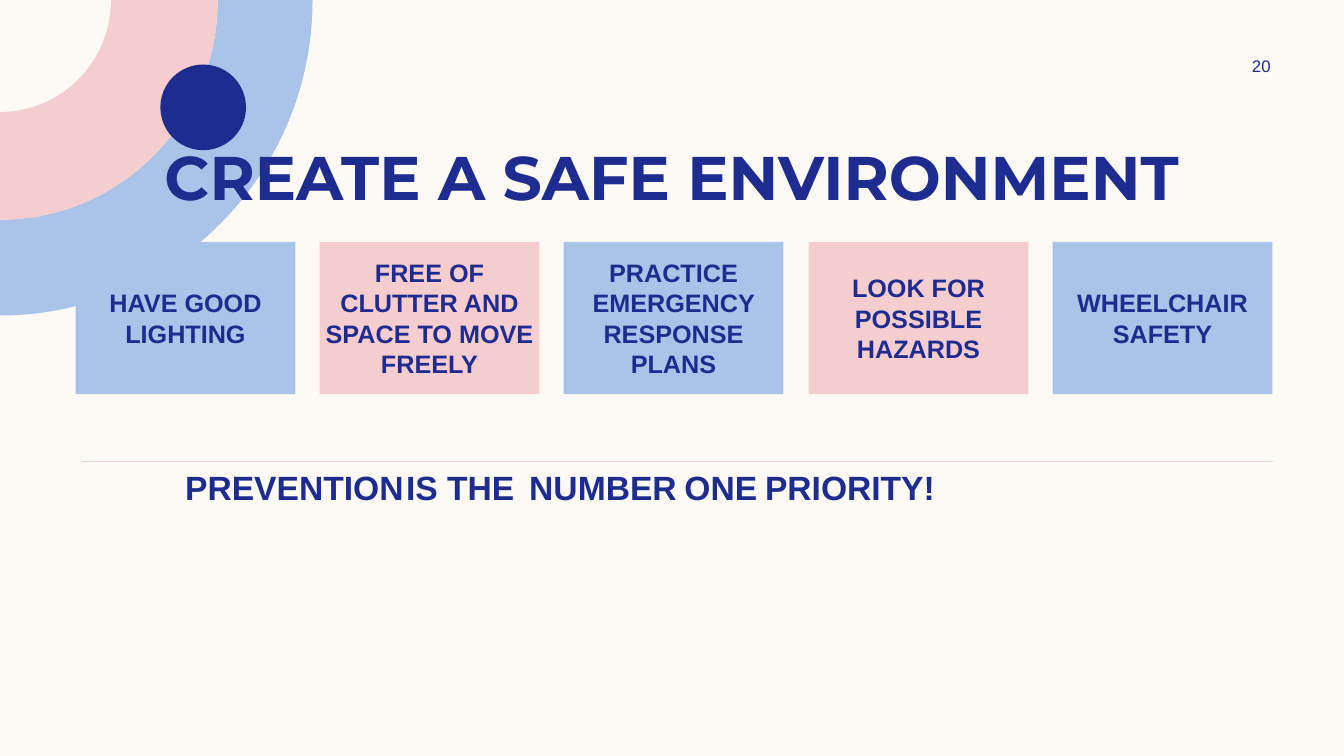
from typing import NamedTuple

from lxml import etree
from pptx import Presentation
from pptx import util as u
from pptx.dml.color import RGBColor
from pptx.enum import shapes, text
from pptx.oxml.ns import qn

PX = 9144
ARC = 0.5523
NAVY, BLUE, PINK, CREAM, RULE = "1F2C8F", "AAC3E8", "F5CDCE", "FDFAF6", "F2D1D1"


class Box(NamedTuple):
    left: int
    top: int
    width: int
    height: int


class Quarter(NamedTuple):
    width: int
    height: int
    color: str
    inner_width: int = 0
    inner_height: int = 0


class Word(NamedTuple):
    left: int
    content: str


QUARTERS = [
    Quarter(310, 313, BLUE, 216, 218),
    Quarter(216, 218, PINK),
    Quarter(110, 111, CREAM),
]
CARDS = [
    "HAVE GOOD LIGHTING",
    "FREE OF CLUTTER AND SPACE TO MOVE FREELY",
    "PRACTICE EMERGENCY RESPONSE PLANS",
    "LOOK FOR POSSIBLE HAZARDS",
    "WHEELCHAIR SAFETY",
]
CARD_LEFT, CARD_TOP, CARD_WIDTH, CARD_HEIGHT, CARD_SPAN = 75, 240, 218, 151, 969
WORDS = [
    Word(183, "PREVENTION"),
    Word(352, "IS THE "),
    Word(489, "NUMBER"),
    Word(606, "ONE"),
    Word(734, "PRIORITY!"),
]
RULE_TOP = 458


def rgb(color: str) -> RGBColor:
    return RGBColor.from_string(color)


def emu(box: Box) -> list[int]:
    return [value * PX for value in box]


def paint(shape, color: str) -> None:
    shape.shadow.inherit = False
    shape.fill.solid()
    shape.fill.fore_color.rgb = rgb(color)
    shape.line.fill.background()


def write(shape, content: str, *, size: int, font: str = "Arial", bold: bool = True,
          anchor=text.MSO_ANCHOR.TOP, side: int = 0, edge: int = 5) -> None:
    frame = shape.text_frame
    frame.word_wrap = True
    frame.vertical_anchor = anchor
    frame.margin_left = frame.margin_right = side * PX
    frame.margin_top = frame.margin_bottom = edge * PX
    paragraph = frame.paragraphs[0]
    paragraph.alignment = text.PP_ALIGN.CENTER
    run = paragraph.add_run()
    run.text = content
    run.font.name = font
    run.font.size = u.Pt(size)
    run.font.bold = bold
    run.font.color.rgb = rgb(NAVY)


def add_text(slide, box: Box, content: str, **style) -> None:
    write(slide.shapes.add_textbox(*emu(box)), content, **style)


def add_shape(slide, kind, box: Box, color: str):
    shape = slide.shapes.add_shape(kind, *emu(box))
    paint(shape, color)
    return shape


def bend(line, controls: list[tuple[float, float]]) -> None:
    line.tag = qn("a:cubicBezTo")
    for index, (x, y) in enumerate(controls):
        point = etree.Element(qn("a:pt"), x=str(round(x * PX)), y=str(round(y * PX)))
        line.insert(index, point)


def add_quarter(slide, quarter: Quarter) -> None:
    width, height, color, inner_width, inner_height = quarter
    corners = [(0, height), (0, inner_height)]
    if inner_width:
        corners.append((inner_width, 0))
    builder = slide.shapes.build_freeform(width, 0, scale=PX)
    builder.add_line_segments(corners, close=True)
    shape = builder.convert_to_shape()
    geometry = shape._element.spPr.find(qn("a:custGeom"))
    for outline in geometry.iter(qn("a:pathLst")):
        outline[0].set("w", str(width * PX))
        outline[0].set("h", str(height * PX))
    for point in geometry.iter(qn("a:pt")):
        for axis in ("x", "y"):
            point.set(axis, str(int(point.get(axis)) * PX))
    lines = list(geometry.iter(qn("a:lnTo")))
    bend(lines[0], [(width, ARC * height), (ARC * width, height)])
    if inner_width:
        bend(lines[2], [(ARC * inner_width, inner_height), (inner_width, ARC * inner_height)])
    paint(shape, color)


def add_rule(slide, left: int, right: int, top: int) -> None:
    rule = slide.shapes.add_connector(
        shapes.MSO_CONNECTOR.STRAIGHT, left * PX, top * PX, right * PX, top * PX)
    rule.line.color.rgb = rgb(RULE)
    rule.line.width = u.Pt(1)
    etree.SubElement(rule._element.spPr, qn("a:effectLst"))


def main() -> None:
    presentation = Presentation()
    presentation.slide_width = 1333 * PX
    presentation.slide_height = 750 * PX
    slide = presentation.slides.add_slide(presentation.slide_layouts[6])
    slide.background.fill.solid()
    slide.background.fill.fore_color.rgb = rgb(CREAM)

    for quarter in QUARTERS:
        add_quarter(slide, quarter)
    add_shape(slide, shapes.MSO_SHAPE.OVAL, Box(159, 64, 85, 85), NAVY)
    add_rule(slide, 81, 1263, RULE_TOP)

    add_text(slide, Box(83, 133, 1167, 84), "CREATE A SAFE ENVIRONMENT",
             size=44, font="Montserrat", side=10)
    add_text(slide, Box(1197, 50, 108, 30), "20", size=12, bold=False,
             anchor=text.MSO_ANCHOR.MIDDLE, side=10)

    for index, content in enumerate(CARDS):
        left = CARD_LEFT + round(index * CARD_SPAN / (len(CARDS) - 1))
        box = Box(left, CARD_TOP, CARD_WIDTH, CARD_HEIGHT)
        card = add_shape(slide, shapes.MSO_SHAPE.RECTANGLE, box, PINK if index % 2 else BLUE)
        write(card, content, size=18, anchor=text.MSO_ANCHOR.MIDDLE, edge=0)

    for word in WORDS:
        add_text(slide, Box(word.left, RULE_TOP, CARD_WIDTH, CARD_HEIGHT), word.content, size=24)

    presentation.save("out.pptx")


if __name__ == "__main__":
    main()
